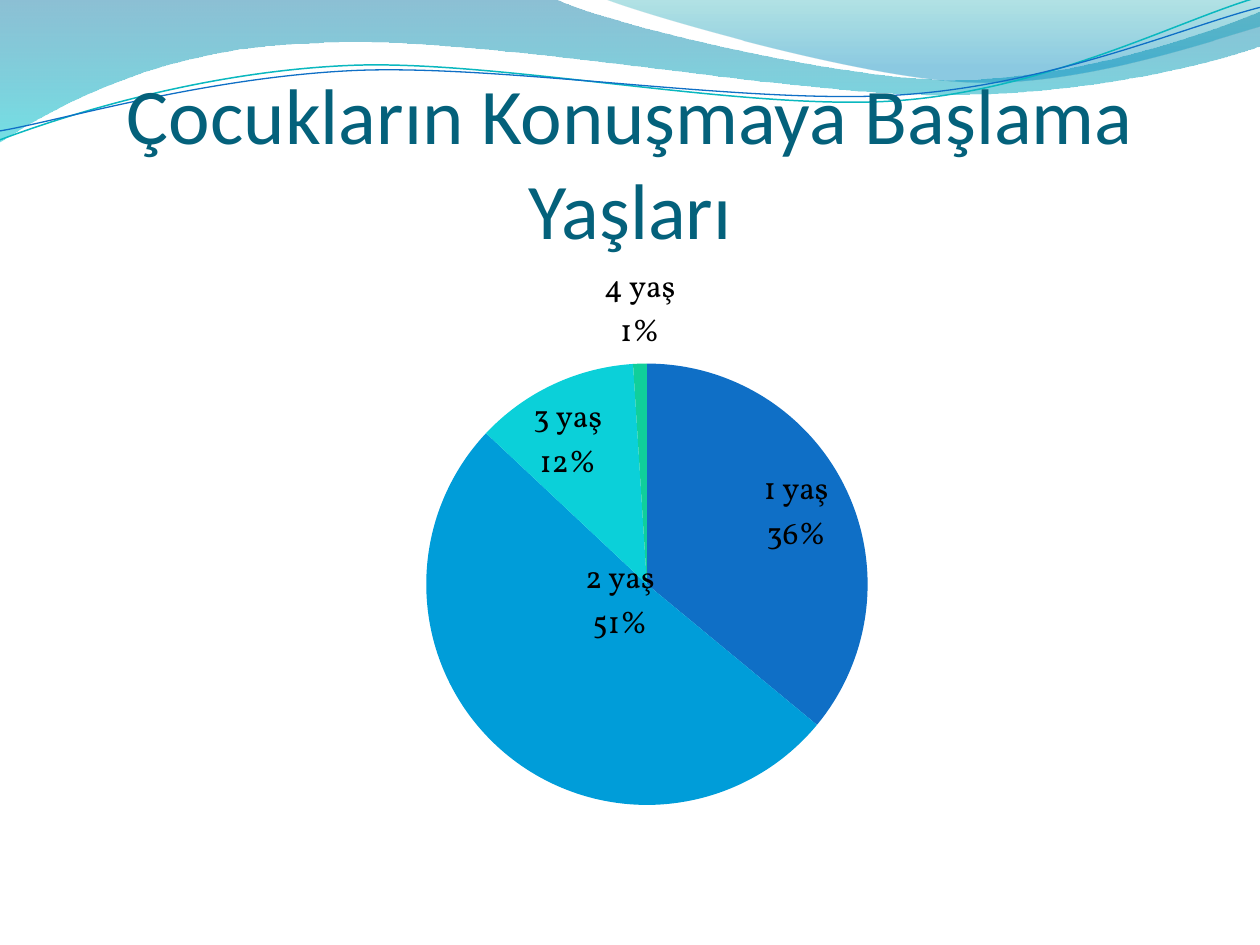
import lxml.etree
import pptx
import pptx.chart.data
import pptx.dml.color
import pptx.enum.chart
import pptx.enum.text
import pptx.oxml.ns
import pptx.util

Cm = pptx.util.Cm
Pt = pptx.util.Pt
qn = pptx.oxml.ns.qn
LABEL_POSITION = pptx.enum.chart.XL_LABEL_POSITION


def color(hex_code):
    return pptx.dml.color.RGBColor.from_string(hex_code)


class SlideBuilder:
    title_font, title_size, title_color = "Calibri", 45, "04617B"
    chart_font, chart_size, chart_color = "Vollkorn", 18, "000000"

    def __init__(self, slide):
        self.slide = slide

    def outline(self, start, segments, close):
        """Segments hold 2 numbers for a line and 6 for a cubic curve."""
        builder = self.slide.shapes.build_freeform(Cm(start[0]), Cm(start[1]))
        ends = [(Cm(segment[-2]), Cm(segment[-1])) for segment in segments]
        builder.add_line_segments(ends, close=close)
        shape = builder.convert_to_shape()
        shape.shadow.inherit = False
        lines = list(shape._element.spPr.iter(qn("a:lnTo")))
        for line, segment in zip(lines, segments):
            if len(segment) == 2:
                continue
            bend = lxml.etree.Element(qn("a:cubicBezTo"))
            for x, y in zip(segment[::2], segment[1::2]):
                lxml.etree.SubElement(bend, qn("a:pt"), x=str(Cm(x) - shape.left),
                                      y=str(Cm(y) - shape.top))
            line.getparent().replace(line, bend)
        return shape

    def wave(self, start, segments, stops):
        """Filled shape; each stop is (position, colour, opacity in percent)."""
        shape = self.outline(start, segments, True)
        shape.line.fill.background()
        shape.fill.gradient()
        shape.fill.gradient_angle = 270
        for stop, (position, hex_code, _) in zip(shape.fill.gradient_stops, stops):
            stop.position = position
            stop.color.rgb = color(hex_code)
        tones = list(shape._element.spPr.iter(qn("a:srgbClr")))
        for tone, (_, _, opacity) in zip(tones, stops):
            lxml.etree.SubElement(tone, qn("a:alpha"), val=str(opacity * 1000))

    def curve(self, start, segments, hex_code, width):
        shape = self.outline(start, segments, False)
        shape.fill.background()
        shape.line.color.rgb = color(hex_code)
        shape.line.width = Pt(width)

    def title(self, text, left, top, width, height):
        box = self.slide.shapes.add_textbox(Cm(left), Cm(top), Cm(width), Cm(height))
        frame = box.text_frame
        frame.word_wrap = True
        frame.vertical_anchor = pptx.enum.text.MSO_ANCHOR.BOTTOM
        frame.margin_left = frame.margin_right = frame.margin_bottom = 0
        para = frame.paragraphs[0]
        para.alignment = pptx.enum.text.PP_ALIGN.CENTER
        span = para.add_run()
        span.text = text
        span.font.name = self.title_font
        span.font.size = Pt(self.title_size)
        span.font.color.rgb = color(self.title_color)

    def pie(self, slices, left, top, width, height, plot_area):
        """Each slice is (name, value, colour, label position, label shift)."""
        data = pptx.chart.data.CategoryChartData()
        data.categories = [item[0] for item in slices]
        data.add_series("Series 1", [item[1] for item in slices])
        chart = self.slide.shapes.add_chart(
            pptx.enum.chart.XL_CHART_TYPE.PIE,
            Cm(left), Cm(top), Cm(width), Cm(height), data).chart
        chart.has_title = chart.has_legend = False
        chart.font.name = self.chart_font
        chart.font.size = Pt(self.chart_size)
        chart.font.color.rgb = color(self.chart_color)
        plot = chart.plots[0]
        plot.vary_by_categories = True
        series = plot.series[0]

        # Size and place of the pie inside the chart
        area = chart._chartSpace.find(".//" + qn("c:plotArea"))
        for old in area.findall(qn("c:layout")):
            area.remove(old)
        area.insert(0, self.layout(
            layoutTarget="inner", xMode="edge", yMode="edge", **plot_area))

        for index, (name, value, hex_code, position, shift) in enumerate(slices):
            point = series.points[index]
            point.format.fill.solid()
            point.format.fill.fore_color.rgb = color(hex_code)
            self.slice_label(point.data_label, (name, f"{value}%"), position)
            label = series.data_labels._element.findall(qn("c:dLbl"))[index]
            for flag, shown in (("showVal", "0"), ("showCatName", "1"), ("showPercent", "1")):
                label.find(qn("c:" + flag)).set("val", shown)
            if shift:
                label.insert(1, self.layout(x=shift[0], y=shift[1]))

    def slice_label(self, label, lines, position):
        frame = label.text_frame
        for number, line in enumerate(lines):
            para = frame.add_paragraph() if number else frame.paragraphs[0]
            span = para.add_run()
            span.text = line
            span.font.size = Pt(self.chart_size)
            span.font.color.rgb = color(self.chart_color)
        label.position = position

    def layout(self, **settings):
        layout = lxml.etree.Element(qn("c:layout"))
        manual = lxml.etree.SubElement(layout, qn("c:manualLayout"))
        for name, value in settings.items():
            lxml.etree.SubElement(manual, qn("c:" + name), val=str(value))
        return layout


def main():
    deck = pptx.Presentation()
    deck.slide_width, deck.slide_height = Cm(25.4), Cm(19.05)
    page = SlideBuilder(deck.slides.add_slide(deck.slide_layouts[6]))

    # Waves along the top edge
    page.wave((0, 0), [
        (11.18, -0.03),
        (12.09, 0.43, 16.87, 1.6, 19.25, 1.6),
        (21.67, 1.6, 24.33, 0.66, 25.4, 0.23),
        (25.43, 0.91),
        (24.97, 1.12, 22.1, 1.93, 18.95, 1.91),
        (15.8, 1.91, 9.7, 0.71, 6.53, 0.86),
        (3.28, 0.91, 1.17, 2.11, -0.03, 2.87),
    ], [(0, "0074A1", 45), (1, "00C6CF", 55)])
    page.wave((12.17, -0.03), [
        (12.93, 0.28, 17.32, 1.57, 19.53, 1.65),
        (21.74, 1.75, 24.41, 0.81, 25.4, 0.53),
        (25.4, 0),
    ], [(0, "00A1A9", 30), (0.8, "008BBF", 45)])

    # Thin curves over the waves
    page.curve((0, 2.82), [
        (1.22, 2.36, 4.01, 1.45, 7.04, 1.32),
        (10.03, 1.19, 15.06, 2.26, 18.11, 2.03),
        (21.16, 1.8, 23.83, 0.38, 25.35, -0.05),
    ], "0AB8BF", 0.85)
    page.curve((0, 2.64), [
        (1.19, 2.44, 4.17, 1.55, 7.19, 1.42),
        (10.24, 1.3, 15.16, 2.13, 18.21, 1.91),
        (21.23, 1.7, 23.9, 0.53, 25.4, 0.15),
    ], "0F6FC6", 0.75)

    page.title("Çocukların Konuşmaya Başlama Yaşları", 1.27, 1.96, 22.86, 3.18)

    # Ages at which children begin to speak
    inside, outside = LABEL_POSITION.INSIDE_END, LABEL_POSITION.OUTSIDE_END
    page.pie([
        ("1 yaş", 36, "0F6FC6", inside, (-0.01, -0.04)),
        ("2 yaş", 51, "009DD9", inside, (0.07, -0.16)),
        ("3 yaş", 12, "0BD0D9", inside, (-0.02, 0.01)),
        ("4 yaş", 1, "10CF9B", outside, None),
    ], 1.27, 5.38, 22.86, 12.19, {"x": 0.32, "y": 0.16, "w": 0.39, "h": 0.73})

    deck.save("out.pptx")


if __name__ == "__main__":
    main()
